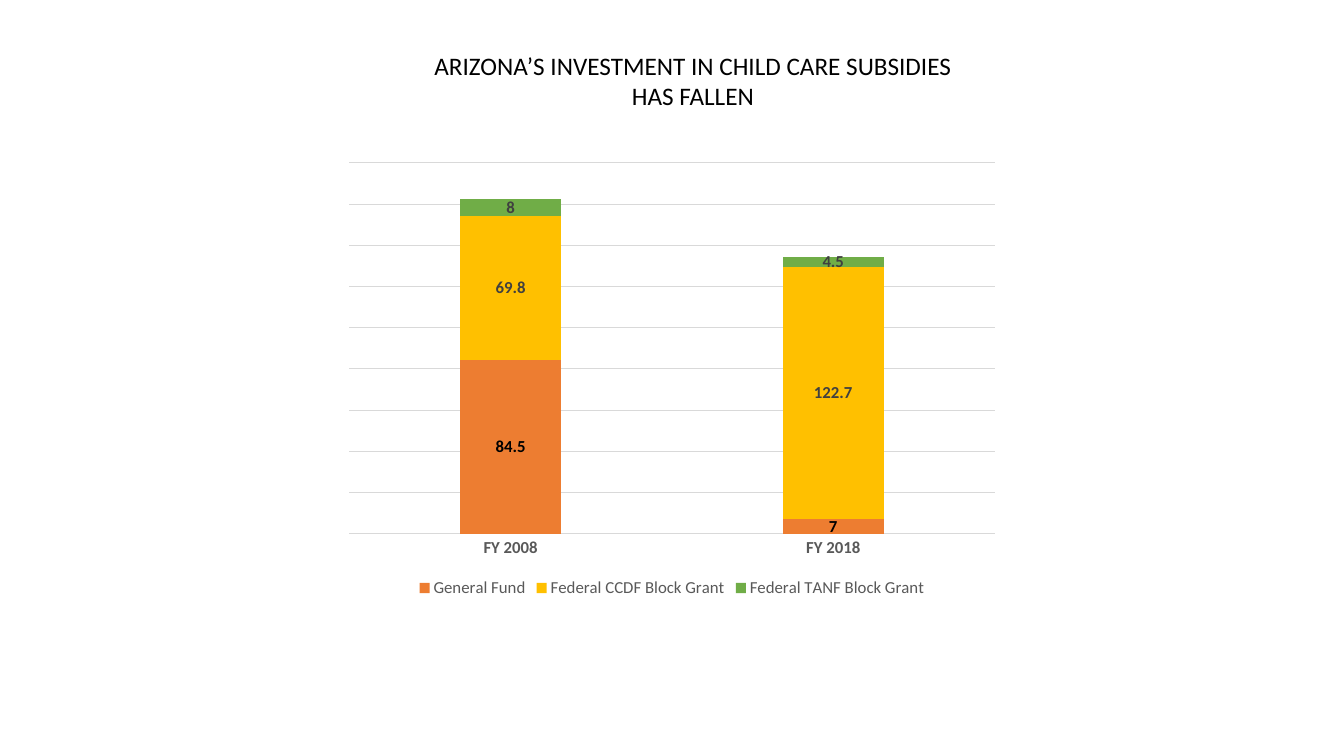
import pptx
import pptx.chart.data
import pptx.dml.color
import pptx.enum.chart
import pptx.enum.text
import pptx.util

Pt = pptx.util.Pt
RGB = pptx.dml.color.RGBColor.from_string
charts = pptx.enum.chart

theme = {
    "font": "Calibri",
    "title_size": 18,
    "chart_size": 12,
    "base_size": 10,
    "black": "000000",
    "axis_text": "595959",
    "label_text": "404040",
    "rule": "D9D9D9",
    "general": "ED7D31",
    "ccdf": "FFC000",
    "tanf": "70AD47",
}


def set_font(font, size, color, bold=False):
    settings = {"name": theme["font"], "size": Pt(size), "bold": bold}
    for name, value in settings.items():
        setattr(font, name, value)
    font.color.rgb = RGB(color)


def set_line(line):
    line.color.rgb = RGB(theme["rule"])
    line.width = Pt(0.75)


deck = pptx.Presentation()
deck.slide_width, deck.slide_height = Pt(960), Pt(540)
page = deck.slides.add_slide(deck.slide_layouts[6])

# Title
box = page.shapes.add_textbox(Pt(288.72), Pt(32.4), Pt(412.56), Pt(51))
frame = box.text_frame
frame.word_wrap = True
frame.text = "ARIZONA’S INVESTMENT IN CHILD CARE SUBSIDIES\nHAS FALLEN"
for para in frame.paragraphs:
    para.alignment = pptx.enum.text.PP_ALIGN.CENTER
    for span in para.runs:
        set_font(span.font, theme["title_size"], theme["black"])

# Series: name, values, fill, label colour
funding = [
    ("General Fund", (84.5, 7), theme["general"], theme["black"]),
    ("Federal CCDF Block Grant", (69.8, 122.7), theme["ccdf"], theme["label_text"]),
    ("Federal TANF Block Grant", (8, 4.5), theme["tanf"], theme["label_text"]),
]
data = pptx.chart.data.CategoryChartData()
data.categories = ["FY 2008", "FY 2018"]
for name, values, fill, label_color in funding:
    data.add_series(name, values)

# Stacked columns
chart = page.shapes.add_chart(
    charts.XL_CHART_TYPE.COLUMN_STACKED, Pt(240), Pt(110), Pt(480), Pt(320), data
).chart
chart.has_title = False
set_font(chart.font, theme["base_size"], theme["black"])
plot = chart.plots[0]
for name, value in {"gap_width": 219, "overlap": 100, "vary_by_categories": False}.items():
    setattr(plot, name, value)
for series, (name, values, fill, label_color) in zip(plot.series, funding):
    series.format.fill.solid()
    series.format.fill.fore_color.rgb = RGB(fill)
    series.data_labels.show_value = True
    set_font(series.data_labels.font, theme["chart_size"], label_color, True)

# Axes
years = chart.category_axis
years.major_tick_mark = charts.XL_TICK_MARK.NONE
set_font(years.tick_labels.font, theme["chart_size"], theme["axis_text"], True)
set_line(years.format.line)
amounts = chart.value_axis
axis_settings = {
    "visible": False,
    "has_major_gridlines": True,
    "minimum_scale": 0,
    "maximum_scale": 180,
    "major_unit": 20,
}
for name, value in axis_settings.items():
    setattr(amounts, name, value)
set_line(amounts.major_gridlines.format.line)

# Legend
chart.has_legend = True
chart.legend.position = charts.XL_LEGEND_POSITION.BOTTOM
chart.legend.include_in_layout = False
set_font(chart.legend.font, theme["chart_size"], theme["axis_text"])

deck.save("out.pptx")
